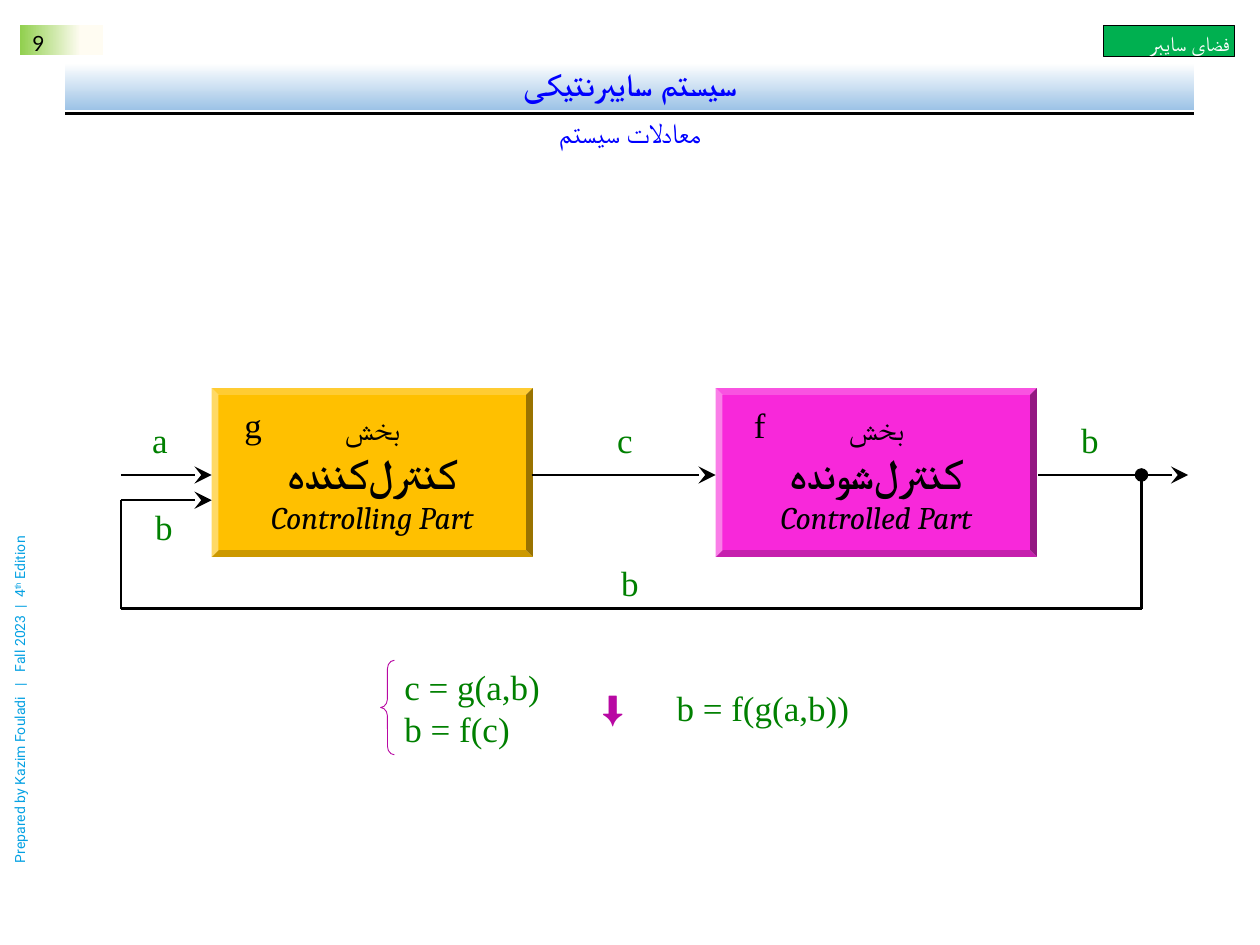
"""Build the cybernetic system equations slide."""
from pptx import Presentation
from pptx.dml.color import RGBColor
from pptx.enum.shapes import MSO_CONNECTOR, MSO_SHAPE
from pptx.enum.text import MSO_ANCHOR, PP_ALIGN
from pptx.oxml.ns import qn
from pptx.util import Inches, Pt
from lxml.etree import SubElement

THEME = {
    "black": "000000", "white": "FFFFFF", "blue": "0000FF", "green": "008000",
    "badge": "00B050", "credit": "04A1E3", "purple": "B808A3",
    "gold": "FFC000", "pink": "F828DA",
    "title_fade": ("FFFFFF", "9DC3E6"), "number_fade": ("FFFCF2", "92D050"),
    "sans": "Calibri", "serif": "Times New Roman", "italic": "Cambria",
    "number": "Lato", "footer": "Roboto",
    "tiny": 8, "small": 12, "subtitle": 16, "title": 18, "symbol": 20, "part": 24,
}

TITLE = "سیستم سایبرنتیکی"
SUBTITLE = "معادلات سیستم"
BADGE = "فضای سایبر"
SLIDE_NUMBER = "9"
CREDIT = [("Prepared by Kazim Fouladi   |   Fall 2023  |  4", False), ("th", True), (" Edition", False)]

NON_JOINER = chr(0x200C)
PARTS = [
    (1.68, "gold", "بخش", ("کنترل", "کننده"), "Controlling Part"),
    (5.68, "pink", "بخش", ("کنترل", "شونده"), "Controlled Part"),
]
PART_TOP, PART_WIDTH, PART_HEIGHT = 3.08, 2.55, 1.34
SIGNAL_Y, RETURN_Y, LOOP_Y = 3.77, 3.97, 4.83
LOOP_LEFT, LOOP_RIGHT = 0.96, 9.06
WIRES = [
    (LOOP_LEFT, SIGNAL_Y, 1.68, SIGNAL_Y, True),
    (4.22, SIGNAL_Y, 5.68, SIGNAL_Y, True),
    (8.24, SIGNAL_Y, 9.43, SIGNAL_Y, True),
    (LOOP_RIGHT, SIGNAL_Y, LOOP_RIGHT, LOOP_Y, False),
    (LOOP_RIGHT, LOOP_Y, LOOP_LEFT, LOOP_Y, False),
    (LOOP_LEFT, LOOP_Y, LOOP_LEFT, RETURN_Y, False),
    (LOOP_LEFT, RETURN_Y, 1.68, RETURN_Y, True),
]
SYMBOLS = [
    ("a", 1.27, 3.49, "green"), ("c", 4.96, 3.49, "green"), ("b", 8.65, 3.49, "green"),
    ("b", 5, 4.62, "green"), ("b", 1.3, 4.18, "green"),
    ("g", 2.01, 3.37, "black"), ("f", 6.03, 3.37, "black"),
]
SYMBOL_WIDTH, SYMBOL_HEIGHT = 0.6, 0.34
EQUATIONS = ["c = g(a,b)", "b = f(c)"]
RESULT = [("⬇", "purple"), ("\tb = f(g(a,b))", "green")]
EQUATION_TOP, EQUATION_HEIGHT, RESULT_TAB = 5.24, 0.75, 0.59


def color(name):
    return RGBColor.from_string(THEME[name])


def set_font(font, face, size, ink, bold=False, italic=False):
    font.name, font.size = THEME[face], Pt(THEME[size])
    font.bold, font.italic = bold, italic
    font.color.rgb = color(ink)


def set_frame(shape, anchor=MSO_ANCHOR.MIDDLE, insets=(0, 0, 0, 0)):
    frame = shape.text_frame
    frame.word_wrap = True
    frame.vertical_anchor = anchor
    frame.margin_left, frame.margin_top, frame.margin_right, frame.margin_bottom = map(Inches, insets)
    return frame


def write(frame, lines, align=PP_ALIGN.LEFT, rtl=False, spacing=None):
    for index, (text, *style) in enumerate(lines):
        paragraph = frame.paragraphs[0] if index == 0 else frame.add_paragraph()
        paragraph.text = text
        paragraph.alignment = align
        paragraph.line_spacing = spacing
        if rtl:
            paragraph._p.get_or_add_pPr().set("rtl", "1")
        set_font(paragraph.font, *style)
        for run in paragraph.runs:
            set_font(run.font, *style)


def add_box(slide, *box):
    return slide.shapes.add_textbox(*map(Inches, box))


def add_shape(slide, kind, box, fill=None, line=None, width=0.5):
    shape = slide.shapes.add_shape(kind, *map(Inches, box))
    shape.shadow.inherit = False
    if fill:
        shape.fill.solid()
        shape.fill.fore_color.rgb = color(fill)
    else:
        shape.fill.background()
    if line:
        shape.line.color.rgb = color(line)
        shape.line.width = Pt(width)
    else:
        shape.line.fill.background()
    return shape


def fade(shape, name, positions, angle):
    shape.fill.gradient()
    shape.fill.gradient_angle = angle
    for stop, ink, position in zip(shape.fill.gradient_stops, THEME[name], positions):
        stop.color.rgb = RGBColor.from_string(ink)
        stop.position = position


def add_line(slide, left, top, right, bottom, arrow=False, width=1.25):
    ends = map(Inches, (left, top, right, bottom))
    connector = slide.shapes.add_connector(MSO_CONNECTOR.STRAIGHT, *ends)
    connector.line.color.rgb = color("black")
    connector.line.width = Pt(width)
    if arrow:
        SubElement(connector.line._get_or_add_ln(), qn("a:tailEnd"), type="stealth", w="lg", len="lg")
    SubElement(connector._element.spPr, qn("a:effectLst"))


def add_header(slide):
    add_line(slide, 0.52, 0.9, 9.48, 0.9, width=1.5)
    number = add_shape(slide, MSO_SHAPE.RECTANGLE, (0.16, 0.2, 0.66, 0.24))
    fade(number, "number_fade", (0.27, 0.99), 180)
    write(set_frame(number, MSO_ANCHOR.TOP, (0.1, 0.04, 0.1, 0)),
          [(SLIDE_NUMBER, "number", "small", "black")])
    badge = add_shape(slide, MSO_SHAPE.RECTANGLE, (8.76, 0.2, 1.04, 0.25), "badge", "black")
    write(set_frame(badge, insets=(0.04, 0.08, 0.04, 0.05)),
          [(BADGE, "sans", "small", "white")], PP_ALIGN.RIGHT)
    title = add_shape(slide, MSO_SHAPE.RECTANGLE, (0.52, 0.5, 8.96, 0.37))
    fade(title, "title_fade", (0, 1), 270)
    write(set_frame(title, insets=(0.1, 0.05, 0.1, 0.05)),
          [(TITLE, "sans", "title", "blue", True)], PP_ALIGN.CENTER, True, 0.9)
    subtitle = add_box(slide, 0.52, 0.93, 8.96, 0.29)
    write(set_frame(subtitle, MSO_ANCHOR.TOP, (0.1, 0.02, 0.1, 0.05)),
          [(SUBTITLE, "sans", "subtitle", "blue")], PP_ALIGN.CENTER, True, 0.9)


def add_runs(paragraph, texts):
    for text in texts:
        paragraph.add_run().text = text
    return paragraph.runs


def add_credit(slide):
    credit = add_box(slide, -1.32, 5.35, 2.96, 0.24)
    credit.rotation = 270
    paragraph = set_frame(credit, MSO_ANCHOR.TOP, (0.1, 0.05, 0.1, 0.05)).paragraphs[0]
    for run, (_, raised) in zip(add_runs(paragraph, [text for text, _ in CREDIT]), CREDIT):
        set_font(run.font, "footer", "tiny", "credit")
        if raised:
            run.font._element.set("baseline", "30000")


def add_diagram(slide):
    for left, fill, label, name, english in PARTS:
        part = add_shape(slide, MSO_SHAPE.BEVEL, (left, PART_TOP, PART_WIDTH, PART_HEIGHT), fill)
        part.adjustments[0] = 0.04
        write(set_frame(part, insets=(0.04,) * 4), [
            (label, "sans", "title", "black"),
            (NON_JOINER.join(name), "sans", "part", "black", True),
            (english, "italic", "title", "black", False, True),
        ], PP_ALIGN.CENTER, True)
    for wire in WIRES:
        add_line(slide, *wire)
    add_shape(slide, MSO_SHAPE.OVAL, (LOOP_RIGHT - 0.05, SIGNAL_Y - 0.05, 0.1, 0.1), "black", "black")
    for text, center, middle, ink in SYMBOLS:
        symbol = add_box(slide, center - SYMBOL_WIDTH / 2, middle - SYMBOL_HEIGHT / 2,
                         SYMBOL_WIDTH, SYMBOL_HEIGHT)
        write(set_frame(symbol), [(text, "serif", "symbol", ink)], PP_ALIGN.CENTER)


def add_equations(slide):
    brace = add_shape(slide, MSO_SHAPE.LEFT_BRACE,
                      (3.02, EQUATION_TOP, 0.11, EQUATION_HEIGHT), line="purple")
    brace.adjustments[0] = 0.61
    system = add_box(slide, 3.21, EQUATION_TOP, 1.46, EQUATION_HEIGHT)
    write(set_frame(system), [(text, "serif", "symbol", "green") for text in EQUATIONS])
    result = add_box(slide, 4.78, EQUATION_TOP, 2.2, EQUATION_HEIGHT)
    paragraph = set_frame(result).paragraphs[0]
    tabs = SubElement(paragraph._p.get_or_add_pPr(), qn("a:tabLst"))
    SubElement(tabs, qn("a:tab"), pos=str(Inches(RESULT_TAB)), algn="l")
    for run, (_, ink) in zip(add_runs(paragraph, [text for text, _ in RESULT]), RESULT):
        set_font(run.font, "serif", "symbol", ink)


def main():
    presentation = Presentation()
    presentation.slide_width, presentation.slide_height = Inches(10), Inches(7.5)
    slide = presentation.slides.add_slide(presentation.slide_layouts[6])
    add_header(slide)
    add_credit(slide)
    add_diagram(slide)
    add_equations(slide)
    presentation.save("out.pptx")


if __name__ == "__main__":
    main()
